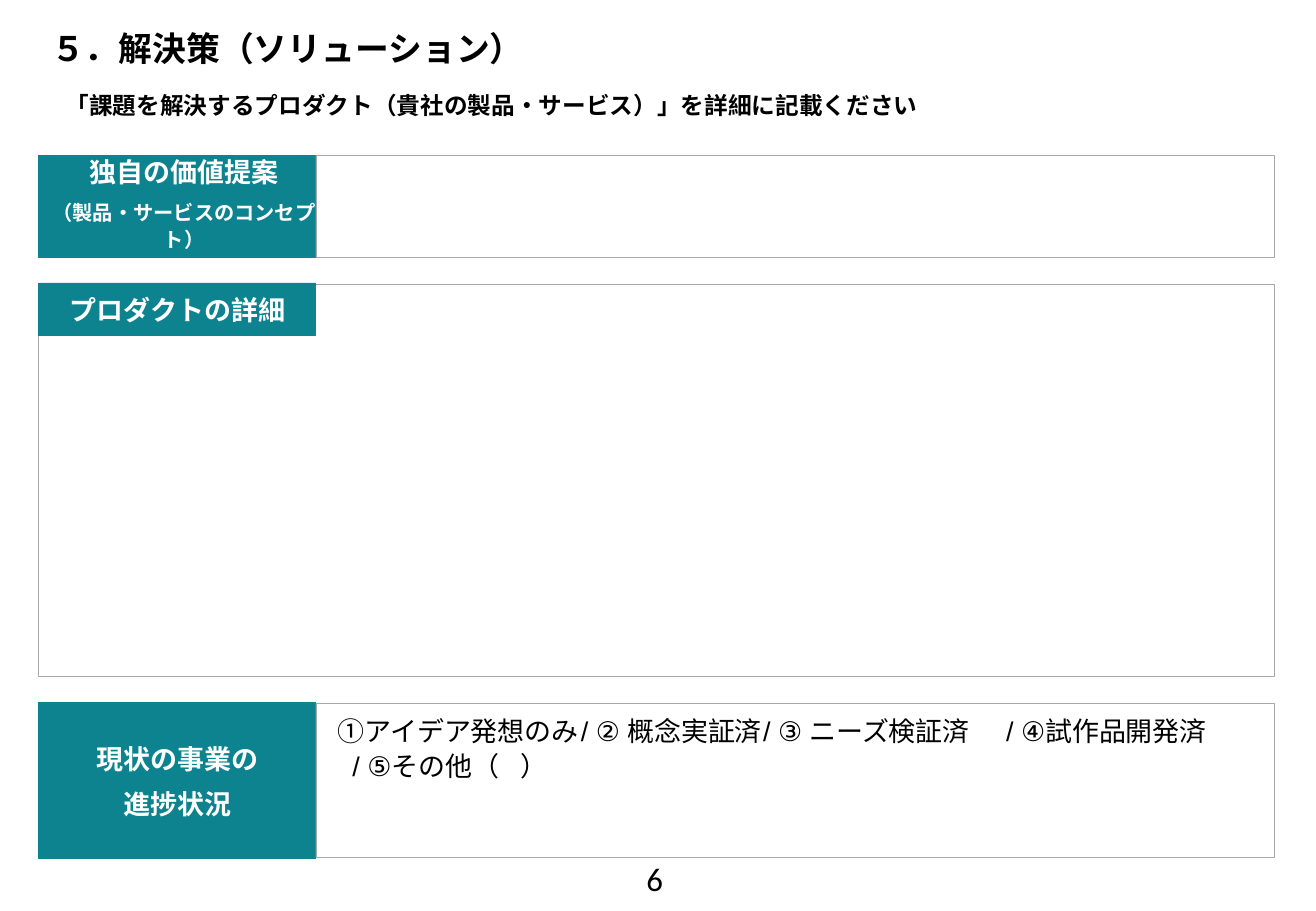
from lxml.etree import SubElement
from pptx import Presentation
from pptx.dml.color import RGBColor
from pptx.enum.shapes import MSO_SHAPE
from pptx.enum.text import MSO_ANCHOR, PP_ALIGN
from pptx.oxml.ns import qn
from pptx.util import Inches, Pt

COLORS = {"teal": "0D8390", "grey": "A7A8AA", "white": "FFFFFF", "black": "000000"}
LEFT, DIVIDER, RIGHT = 0.32, 2.6, 10.49


class SlideBuilder:
    def __init__(self, presentation):
        self.slide = presentation.slides.add_slide(presentation.slide_layouts[5])

    def color(self, name):
        return RGBColor.from_string(COLORS[name])

    def style(self, paragraph, size, font="Calibri", color="black", bold=False):
        paragraph.font.size = Pt(size)
        paragraph.font.name = font
        paragraph.font.bold = bold
        paragraph.font.color.rgb = self.color(color)

    def place(self, shape, left, top, width, height):
        shape.left, shape.top = Inches(left), Inches(top)
        shape.width, shape.height = Inches(width), Inches(height)

    def title(self, text):
        title = self.slide.shapes.title
        self.place(title, LEFT, 0.18, 9.92, 0.67)
        title.text_frame.text = text
        title.text_frame.vertical_anchor = MSO_ANCHOR.TOP
        paragraph = title.text_frame.paragraphs[0]
        paragraph.alignment = PP_ALIGN.LEFT
        self.style(paragraph, 20, bold=True)

    def text(self, text, left, top, width, height, size, inset, anchor, bold=False):
        box = self.slide.shapes.add_textbox(
            Inches(left), Inches(top), Inches(width), Inches(height))
        frame = box.text_frame
        frame.word_wrap = True
        frame.margin_left = Inches(inset)
        frame.vertical_anchor = anchor
        frame.text = text
        self.style(frame.paragraphs[0], size, bold=bold)

    def rectangle(self, left, top, right, height, fill="white", line="grey"):
        shape = self.slide.shapes.add_shape(
            MSO_SHAPE.RECTANGLE, Inches(left), Inches(top),
            Inches(right - left), Inches(height))
        shape.shadow.inherit = False
        shape.fill.solid()
        shape.fill.fore_color.rgb = self.color(fill)
        shape.line.color.rgb = self.color(line)
        shape.line.width = Pt(0.5)
        frame = shape.text_frame
        frame.word_wrap = True
        frame.margin_left = frame.margin_right = Inches(0.08)
        frame.margin_top = frame.margin_bottom = Inches(0.08)
        return shape

    def paragraphs(self, frame, texts):
        frame.text = "\n".join(texts)
        return frame.paragraphs

    def label(self, lines, top, height, right=DIVIDER, spacing=1.06):
        frame = self.rectangle(LEFT, top, right, height, "teal", "teal").text_frame
        frame.vertical_anchor = MSO_ANCHOR.MIDDLE
        texts = [text for text, size in lines]
        for index, paragraph in enumerate(self.paragraphs(frame, texts)):
            paragraph.alignment = PP_ALIGN.CENTER
            paragraph.line_spacing = spacing
            paragraph.space_before = Pt(6 if index else 0)
            self.style(paragraph, lines[index][1], "Arial", "white", True)

    def options(self, lines, top, height):
        frame = self.rectangle(DIVIDER, top, RIGHT, height).text_frame
        frame.margin_left = Inches(0.18)
        frame.vertical_anchor = MSO_ANCHOR.TOP
        texts = [text for text, indent, stops in lines]
        for paragraph, (text, indent, stops) in zip(self.paragraphs(frame, texts), lines):
            paragraph.alignment = PP_ALIGN.LEFT
            paragraph.line_spacing = 1.06
            properties = paragraph._p.get_or_add_pPr()
            properties.set("marL", "0")
            properties.set("indent", str(Inches(indent)))
            tabs = SubElement(properties, qn("a:tabLst"))
            for stop in stops:
                SubElement(tabs, qn("a:tab"), pos=str(Inches(stop)), algn="l")
            self.style(paragraph, 16, "Arial")


def main():
    presentation = Presentation()
    presentation.slide_width = Inches(10.83)
    presentation.slide_height = Inches(7.5)
    builder = SlideBuilder(presentation)

    builder.title("５．解決策（ソリューション）")
    builder.text("「課題を解決するプロダクト（貴社の製品・サービス）」を詳細に記載ください",
                 0.46, 0.63, 9, 0.47, 14, 0.08, MSO_ANCHOR.MIDDLE, True)

    builder.label([("独自の価値提案", 16), ("（製品・サービスのコンセプト）", 12)],
                  1.28, 0.84, 2.71, Pt(16))
    builder.rectangle(DIVIDER, 1.28, RIGHT, 0.84)

    builder.rectangle(LEFT, 2.34, RIGHT, 3.23)
    builder.label([("プロダクトの詳細", 16)], 2.33, 0.43)

    builder.label([("現状の事業の", 16), ("進捗状況", 16)], 5.78, 1.29)
    builder.options([
        ("①アイデア発想のみ\t/ ② 概念実証済\t/ ③ ニーズ検証済\t/ ④試作品開発済",
         0, [2.13, 3.83, 5.74]),
        ("/ ⑤その他（\t）", 0.12, [2.92]),
    ], 5.79, 1.27)

    builder.text("6", 5.22, 7.02, 0.81, 0.4, 19.5, 0.1, MSO_ANCHOR.TOP)
    presentation.save("out.pptx")


if __name__ == "__main__":
    main()
